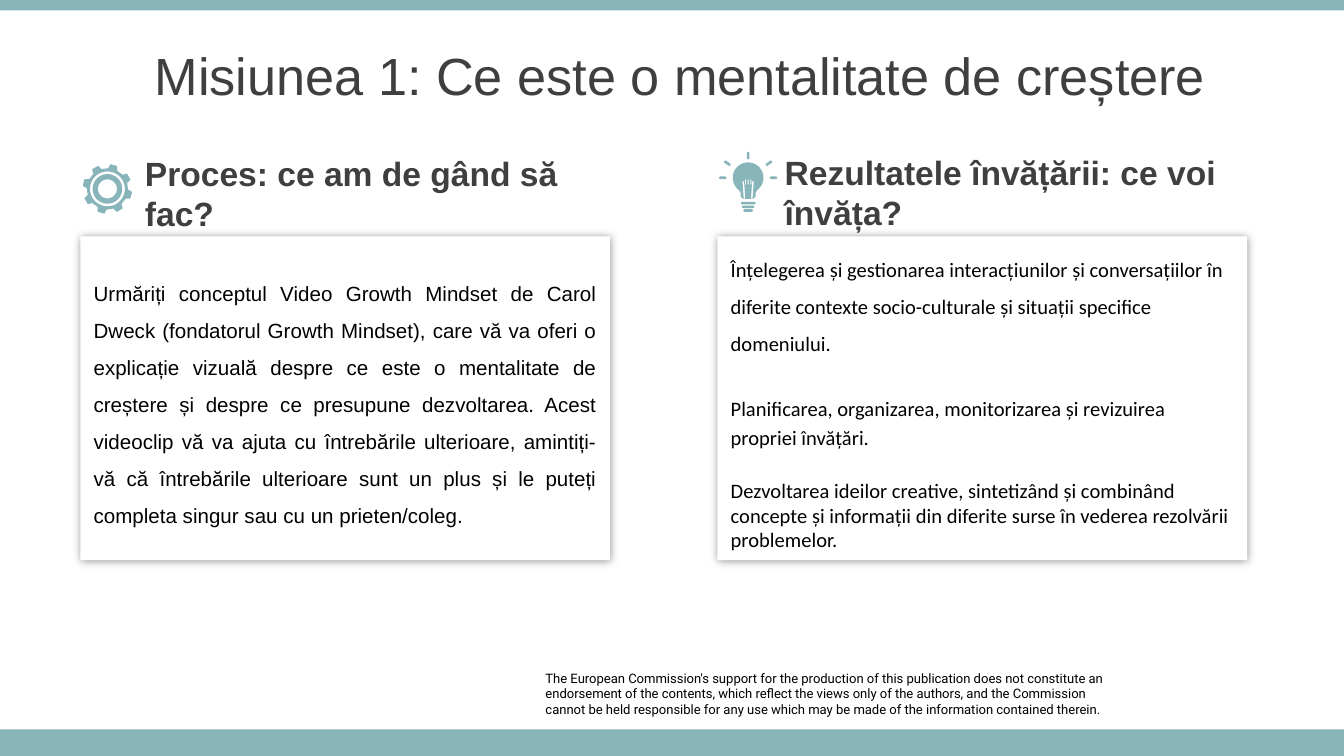
import math

import pptx
import pptx.dml.color
import pptx.enum.shapes
import pptx.enum.text
import pptx.oxml
import pptx.oxml.ns
import pptx.util

Cm, Pt = pptx.util.Cm, pptx.util.Pt
RGB = pptx.dml.color.RGBColor
ALIGN = pptx.enum.text.PP_ALIGN
ANCHOR = pptx.enum.text.MSO_ANCHOR
RECT = pptx.enum.shapes.MSO_SHAPE.RECTANGLE

TEAL = RGB(0x87, 0xB5, 0xBA)
DARK = RGB(0x3F, 0x3F, 0x3F)
BLACK = RGB(0, 0, 0)
WHITE = RGB(255, 255, 255)

W, H = 25.4, 14.29
BARS = [(0, 0, W, 0.2), (0, 13.79, W, 0.5)]

TITLE = "Misiunea 1: Ce este o mentalitate de creștere"
TITLE_FONT = {"name": "Arial", "size": Pt(28), "bold": False}
HEAD_FONT = {"name": "Arial", "size": Pt(18), "bold": True}
NOTE_FONT = {"name": "Roboto", "size": Pt(7)}

COLUMNS = [
    {
        "left": 1.52, "head": "Proces: ce am de gând să fac?", "head_at": (2.49, 3.25),
        "font": {"name": "Arial", "size": Pt(11)},
        "body": [
            ("Urmăriți conceptul Video Growth Mindset de Carol Dweck (fondatorul Growth Mindset), "
             "care vă va oferi o explicație vizuală despre ce este o mentalitate de creștere și "
             "despre ce presupune dezvoltarea. Acest videoclip vă va ajuta cu întrebările "
             "ulterioare, amintiți-vă că întrebările ulterioare sunt un plus și le puteți "
             "completa singur sau cu un prieten/coleg.",
             {"alignment": ALIGN.JUSTIFY, "line_spacing": 1.5}),
        ],
    },
    {
        "left": 13.56, "head": "Rezultatele învățării: ce voi învăța?", "head_at": (14.58, 3.23),
        "font": {"name": "Calibri", "size": Pt(11)},
        "body": [
            ("Înțelegerea și gestionarea interacțiunilor și conversațiilor în diferite contexte "
             "socio-culturale și situații specifice domeniului.",
             {"alignment": ALIGN.LEFT, "line_spacing": 1.5, "space_after": Pt(20)}),
            ("Planificarea, organizarea, monitorizarea și revizuirea propriei învățări.",
             {"alignment": ALIGN.LEFT, "line_spacing": 1.15, "space_after": Pt(15.4)}),
            ("Dezvoltarea ideilor creative, sintetizând și combinând concepte și informații din "
             "diferite surse în vederea rezolvării problemelor.",
             {"alignment": ALIGN.LEFT, "line_spacing": 1.0}),
        ],
    },
]

NOTE = [
    "The European Commission's support for the production of this publication does not "
    "constitute an endorsement of the contents, which reflect the views only of the authors, "
    "and the Commission",
    "cannot be held responsible for any use which may be made of the information contained therein.",
]


def apply(obj, values):
    for name, value in values.items():
        setattr(obj, name, value)


def write(sp, paragraphs, font, color, anchor=ANCHOR.MIDDLE, inset=(0.25, 0.13)):
    tf = sp.text_frame
    x, y = map(Cm, inset)
    apply(tf, {"word_wrap": True, "auto_size": pptx.enum.text.MSO_AUTO_SIZE.NONE,
               "vertical_anchor": anchor, "margin_left": x, "margin_right": x,
               "margin_top": y, "margin_bottom": y})
    for i, (text, layout) in enumerate(paragraphs):
        p = tf.add_paragraph() if i else tf.paragraphs[0]
        r = p.add_run()
        r.text = text
        apply(p, layout)
        apply(r.font, font)
        r.font.color.rgb = color


def paint(sp, color):
    sp.shadow.inherit = False
    sp.fill.solid()
    sp.fill.fore_color.rgb = color
    sp.line.fill.background()
    return sp


def rect(s, at, color):
    return paint(s.shapes.add_shape(RECT, *map(Cm, at)), color)


def glow(sp):
    effects = sp._element.spPr.find(pptx.oxml.ns.qn("a:effectLst"))
    effects.append(pptx.oxml.parse_xml(
        f'<a:outerShdw {pptx.oxml.ns.nsdecls("a")} blurRad="{Pt(5)}" dist="0" dir="0" '
        'algn="ctr" rotWithShape="0"><a:srgbClr val="000000"><a:alpha val="40000"/>'
        '</a:srgbClr></a:outerShdw>'))


def polar(cx, cy, radius, degrees):
    a = math.radians(degrees)
    return cx + radius * math.cos(a), cy + radius * math.sin(a)


def arc(cx, cy, radius, start=0, end=350, step=10):
    return [polar(cx, cy, radius, a) for a in range(start, end + 1, step)]


def capsule(cx, cy, length, thick, angle=0):
    half = (length - thick) / 2
    right, left = polar(cx, cy, half, angle), polar(cx, cy, -half, angle)
    return (arc(*right, thick / 2, angle - 90, angle + 90, 30)
            + arc(*left, thick / 2, angle + 90, angle + 270, 30))


def icon(s, contours):
    contours = [[(Cm(x), Cm(y)) for x, y in c] for c in contours]
    fb = s.shapes.build_freeform(*contours[0][0], scale=1.0)
    for i, c in enumerate(contours):
        if i:
            fb.move_to(*c[0])
        fb.add_line_segments(c[1:], close=True)
    paint(fb.convert_to_shape(), TEAL)


def gear(cx, cy, teeth=8, tip=0.47, root=0.39):
    outline = []
    for i in range(teeth):
        middle = i * 360 / teeth + 15
        outline += [polar(cx, cy, radius, middle + offset)
                    for radius, offset in ((root, -13), (tip, -8), (tip, 8), (root, 13))]
    return [outline] + [arc(cx, cy, radius) for radius in (0.33, 0.28, 0.18)]


def bulb(cx, cy):
    neck = [(-0.14, 0.28), (-0.14, 0.36), (-0.09, 0.4), (0.09, 0.4), (0.14, 0.36), (0.14, 0.28)]
    glass = arc(cx, cy, 0.29, 130, 410) + [(cx + x, cy + y) for x, y in reversed(neck)]
    rays = [capsule(*polar(cx, cy, d, a), 0.14, 0.05, a)
            for a, d in ((-180, 0.48), (-145, 0.48), (-90, 0.42), (-35, 0.48), (0, 0.48))]
    base = [capsule(cx, cy + 0.48 + 0.07 * i, 0.28 - 0.05 * i, 0.05) for i in range(3)]
    wires = [capsule(cx + 0.08 * side, cy + 0.23, 0.34, 0.03, 90 + 4 * side) for side in (-1, 1)]
    coil = [capsule(cx + 0.05 * i, cy + 0.08, 0.1, 0.02, 90) for i in (-1, 0, 1)]
    return [glass] + rays + base + wires + coil


def main():
    prs = pptx.Presentation()
    prs.slide_width, prs.slide_height = Cm(W), Cm(H)
    s = prs.slides.add_slide(prs.slide_layouts[5])

    note = s.shapes.add_textbox(Cm(10.31), Cm(12.67), Cm(10.6), Cm(0.89))
    write(note, [(text, {}) for text in NOTE], NOTE_FONT, BLACK, ANCHOR.TOP, (0, 0))
    for bar in BARS:
        rect(s, bar, TEAL)

    title = s.shapes.title
    apply(title, {"left": Cm(0.15), "top": Cm(0.61), "width": Cm(W), "height": Cm(1.6)})
    write(title, [(TITLE, {"alignment": ALIGN.CENTER})], TITLE_FONT, DARK)

    icon(s, gear(2.03, 3.57))
    icon(s, bulb(14.14, 3.36))

    for col in COLUMNS:
        box = rect(s, (col["left"], 4.47, 10.01, 6.12), WHITE)
        glow(box)
        write(box, col["body"], col["font"], BLACK)
        head = s.shapes.add_textbox(*map(Cm, col["head_at"]), Cm(9.04), Cm(0.79))
        write(head, [(col["head"], {})], HEAD_FONT, DARK)

    prs.save("out.pptx")


if __name__ == "__main__":
    main()
